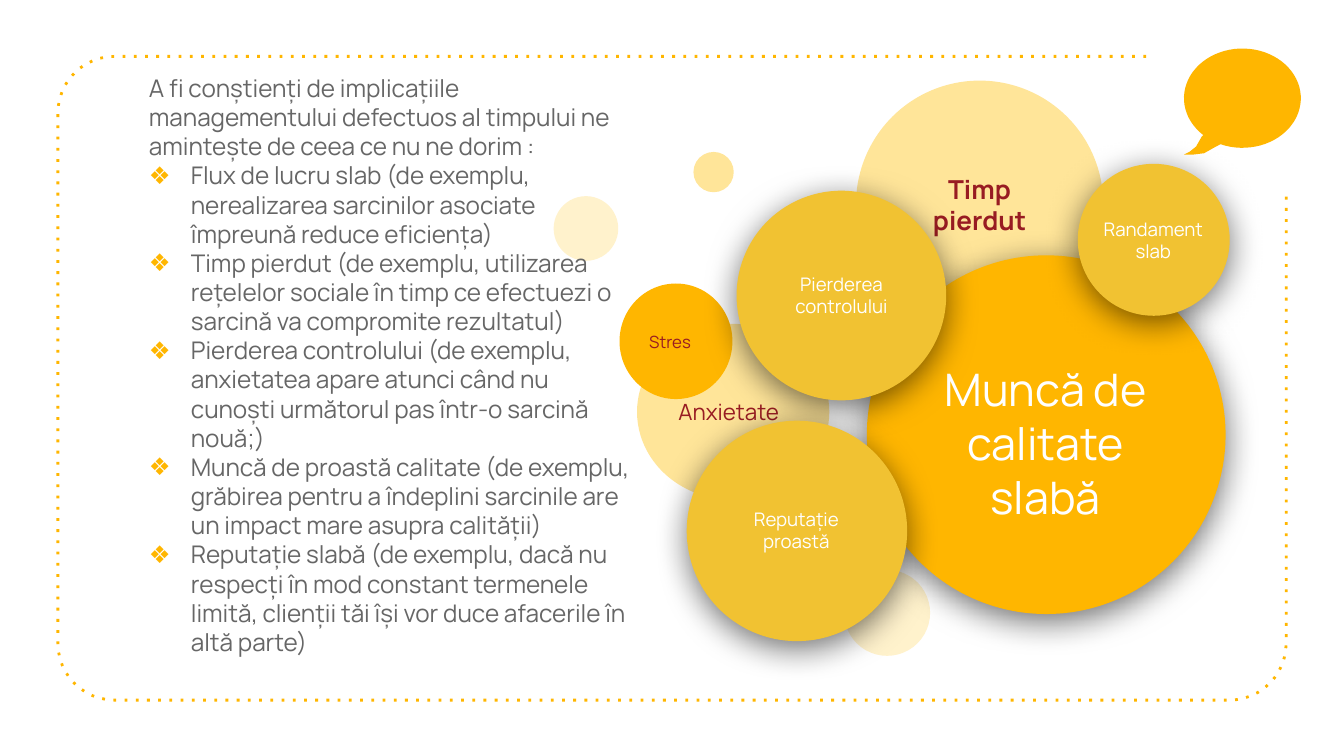
from dataclasses import dataclass
from math import cos, radians, sin

from lxml import etree
from pptx import Presentation
from pptx.dml.color import RGBColor
from pptx.enum.shapes import MSO_SHAPE
from pptx.enum.text import MSO_ANCHOR, PP_ALIGN
from pptx.oxml.ns import qn
from pptx.util import Pt

OVAL = MSO_SHAPE.OVAL
RECTANGLE = MSO_SHAPE.RECTANGLE
LEFT = PP_ALIGN.LEFT
CENTER = PP_ALIGN.CENTER
TOP = MSO_ANCHOR.TOP
MIDDLE = MSO_ANCHOR.MIDDLE


@dataclass(frozen=True)
class Theme:
    font: str = "Manrope"
    amber: str = "FFB600"
    gold: str = "F1C232"
    pale: str = "FFE599"
    faint: str = "FFF2CC"
    red: str = "981C22"
    grey: str = "666666"
    white: str = "FFFFFF"
    black: str = "000000"
    main_size: int = 24
    strong_size: int = 14
    body_size: int = 13
    label_size: int = 12
    caption_size: int = 10
    small_size: int = 9


THEME = Theme()

INTRO = ("A fi conștienți de implicațiile managementului defectuos al timpului ne "
         "amintește de ceea ce nu ne dorim :")
CONSEQUENCES = [
    "Flux de lucru slab (de exemplu, nerealizarea sarcinilor asociate împreună reduce eficiența)",
    "Timp pierdut (de exemplu, utilizarea rețelelor sociale în timp ce efectuezi o sarcină "
    "va compromite rezultatul)",
    "Pierderea controlului (de exemplu, anxietatea apare atunci când nu cunoști următorul pas "
    "într-o sarcină nouă;)",
    "Muncă de proastă calitate (de exemplu, grăbirea pentru a îndeplini sarcinile are un impact "
    "mare asupra calității)",
    "Reputație slabă (de exemplu, dacă nu respecți în mod constant termenele limită, clienții tăi "
    "își vor duce afacerile în altă parte)",
]


def set_attributes(target, values):
    for name, value in values.items():
        setattr(target, name, value)


def prepare_frame(shape, anchor):
    set_attributes(shape.text_frame, {
        "word_wrap": True, "vertical_anchor": anchor,
        "margin_left": Pt(7.2), "margin_right": Pt(7.2),
        "margin_top": Pt(7.2), "margin_bottom": Pt(7.2),
    })
    return shape.text_frame


def write(paragraph, text, size, color, alignment=CENTER, bold=False):
    paragraph.alignment = alignment
    run = paragraph.add_run()
    run.text = text
    set_attributes(run.font, {"name": THEME.font, "size": Pt(size), "bold": bold})
    run.font.color.rgb = RGBColor.from_string(color)


def paint(shape, color):
    shape.fill.solid()
    shape.fill.fore_color.rgb = RGBColor.from_string(color)
    shape.line.fill.background()
    shape.shadow.inherit = False


def add_filled(slide, kind, box, color):
    shape = slide.shapes.add_shape(kind, *map(Pt, box))
    paint(shape, color)
    return shape


def add_circle(slide, left, top, diameter, color):
    return add_filled(slide, OVAL, (left, top, diameter, diameter), color)


def add_shadow(shape):
    effects = shape._element.spPr.find(qn("a:effectLst"))
    shadow = etree.SubElement(effects, qn("a:outerShdw"), blurRad=str(Pt(18)),
                              dist=str(Pt(4)), dir="5400000", algn="bl", rotWithShape="0")
    color = etree.SubElement(shadow, qn("a:srgbClr"), val=THEME.black)
    etree.SubElement(color, qn("a:alpha"), val="54000")


def add_label(shape, text, size, color, alignment=CENTER, bold=False):
    frame = prepare_frame(shape, MIDDLE)
    write(frame.paragraphs[0], text, size, color, alignment, bold)


def add_caption(slide, box, text):
    add_label(slide.shapes.add_textbox(*map(Pt, box)), text, THEME.caption_size, THEME.white)


def arc(center_x, center_y, radius_x, radius_y, start, end, steps):
    angles = [radians(start + (end - start) * step / steps) for step in range(steps + 1)]
    return [(center_x + radius_x * cos(angle), center_y + radius_y * sin(angle))
            for angle in angles]


def add_outline(slide, points, close):
    first, *rest = [(Pt(x), Pt(y)) for x, y in points]
    builder = slide.shapes.build_freeform(*first)
    builder.add_line_segments(rest, close=close)
    return builder.convert_to_shape()


def add_border(slide):
    left, top, right, bottom, radius = 31, 30.2, 689, 375.1, 30.4
    points = [(614, top)]
    points += arc(left + radius, top + radius, radius, radius, 270, 180, 12)
    points += arc(left + radius, bottom - radius, radius, radius, 180, 90, 12)
    points += arc(right - radius, bottom - radius, radius, radius, 90, 0, 12)
    points.append((right, 105))
    border = add_outline(slide, points, close=False)
    border.fill.background()
    border.shadow.inherit = False
    border.line.color.rgb = RGBColor.from_string(THEME.amber)
    border.line.width = Pt(1.5)
    line = border._element.spPr.find(qn("a:ln"))
    etree.SubElement(line, qn("a:prstDash"), val="dot")


def add_speech_bubble(slide):
    tail = [(650.2, 79.2), (645.1, 82.1), (639.4, 82.8), (634.3, 82.8),
            (637.2, 81.4), (640.8, 78.5), (643.7, 73.4)]
    bubble = add_outline(slide, arc(665.6, 52.6, 31.3, 26.6, 132, 472, 68) + tail, close=True)
    paint(bubble, THEME.amber)


def add_bullet(paragraph):
    properties = paragraph._p.get_or_add_pPr()
    properties.set("marL", str(Pt(22.5)))
    properties.set("indent", str(Pt(-22.5)))
    color = etree.SubElement(properties, qn("a:buClr"))
    etree.SubElement(color, qn("a:srgbClr"), val=THEME.amber)
    etree.SubElement(properties, qn("a:buFont"), typeface=THEME.font)
    etree.SubElement(properties, qn("a:buChar"), char="❖")


def add_body(slide):
    frame = prepare_frame(slide.shapes.add_textbox(Pt(72.7), Pt(32), Pt(274), Pt(326.2)), TOP)
    intro = frame.paragraphs[0]
    write(intro, INTRO, THEME.body_size, THEME.grey, LEFT)
    intro.space_before = Pt(6)
    for text in CONSEQUENCES:
        paragraph = frame.add_paragraph()
        write(paragraph, text, THEME.body_size, THEME.grey, LEFT)
        add_bullet(paragraph)


def add_bubbles(slide):
    add_circle(slide, 452.2, 305.3, 46.1, THEME.faint)
    add_circle(slide, 296.6, 105.1, 34.6, THEME.faint)
    anxiety = add_filled(slide, OVAL, (341.3, 173.5, 103, 94.3), THEME.pale)
    add_label(anxiety, "Anxietate", THEME.label_size, THEME.red, LEFT)
    lost_time = add_circle(slide, 458.6, 43.2, 132.5, THEME.pale)
    add_label(lost_time, "Timp pierdut", THEME.strong_size, THEME.red, bold=True)
    stress = add_filled(slide, OVAL, (331.9, 151.9, 60.5, 61.9), THEME.amber)
    add_label(stress, "Stres", THEME.small_size, THEME.red, LEFT)
    add_circle(slide, 371.5, 81.4, 21.6, THEME.pale)

    add_shadow(add_circle(slide, 464.4, 136.8, 192.2, THEME.amber))
    quality = add_filled(slide, RECTANGLE, (486.7, 191.5, 146.9, 91.4), THEME.amber)
    add_label(quality, "Muncă de calitate slabă", THEME.main_size, THEME.white)

    for circle, caption_box, caption in [
        ((394.6, 102.2, 112.3), (412.6, 121, 76.3, 74.2), "Pierderea controlului"),
        ((367.9, 225.4, 118.1), (384.5, 247, 84.2, 74.2), "Reputație proastă"),
        ((577.4, 87.8, 81.4), (582.5, 101.5, 70.6, 54), "Randament slab"),
    ]:
        add_shadow(add_circle(slide, *circle, THEME.gold))
        add_caption(slide, caption_box, caption)


def main():
    presentation = Presentation()
    set_attributes(presentation, {"slide_width": Pt(720), "slide_height": Pt(405)})
    slide = presentation.slides.add_slide(presentation.slide_layouts[6])
    add_border(slide)
    add_bubbles(slide)
    add_speech_bubble(slide)
    add_body(slide)
    presentation.save("out.pptx")


if __name__ == "__main__":
    main()
